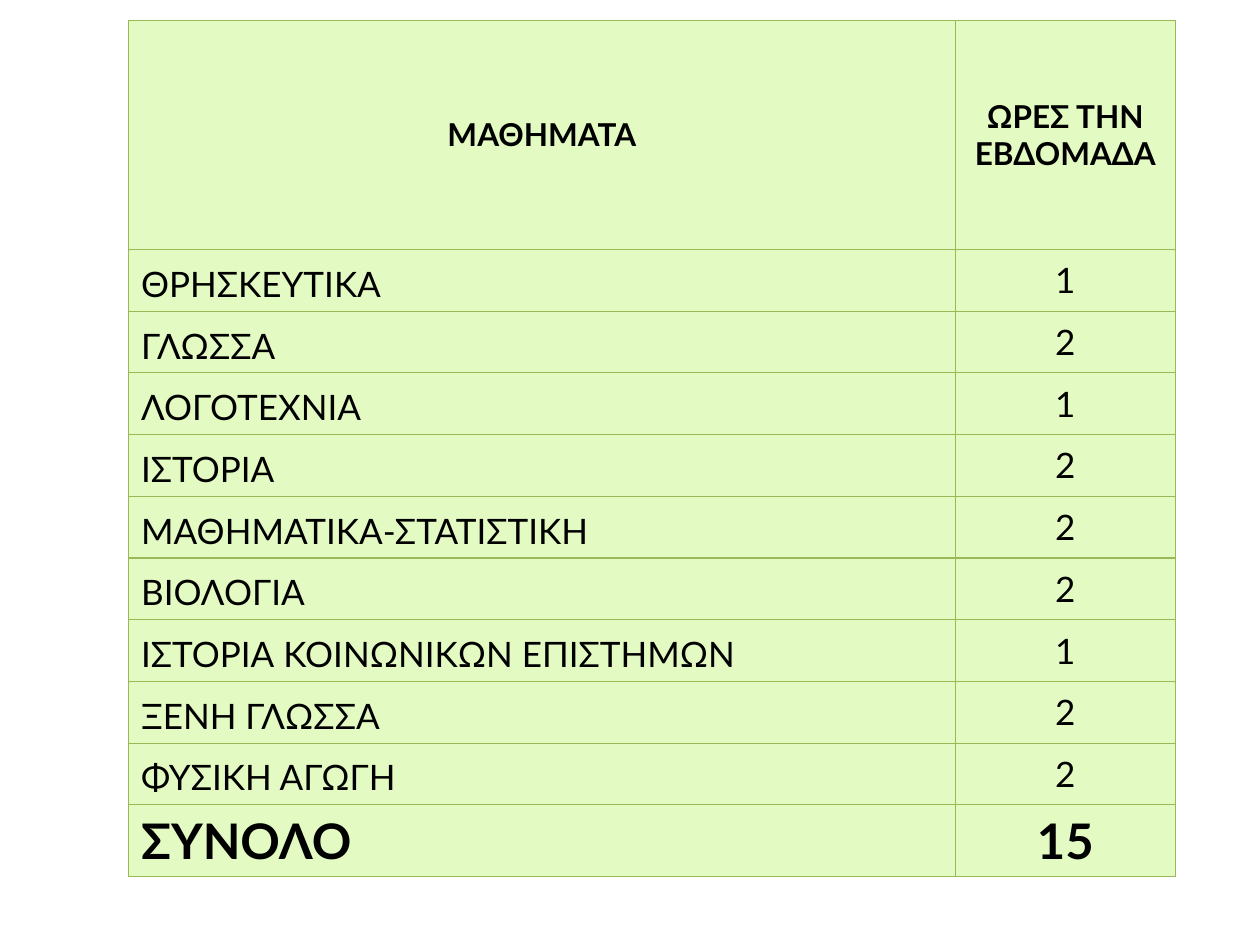
from lxml import etree
from pptx import Presentation
from pptx.dml.color import RGBColor
from pptx.enum.text import MSO_ANCHOR, PP_ALIGN
from pptx.oxml.ns import qn
from pptx.util import Inches, Pt

LEFT, CENTER = PP_ALIGN.LEFT, PP_ALIGN.CENTER
MIDDLE, BOTTOM = MSO_ANCHOR.MIDDLE, MSO_ANCHOR.BOTTOM

FILL, BORDER, TEXT = "E3FBC2", "98B955", "000000"
COL_WIDTHS = [6.56, 1.75]
HEADER_HEIGHT, LESSON_HEIGHT, TOTAL_HEIGHT = 1.82, 0.49, 0.56
HEADER = ("ΜΑΘΗΜΑΤΑ", "ΩΡΕΣ ΤΗΝ ΕΒΔΟΜΑΔΑ")
LESSONS = [
    ("ΘΡΗΣΚΕΥΤΙΚΑ", 1),
    ("ΓΛΩΣΣΑ", 2),
    ("ΛΟΓΟΤΕΧΝΙΑ", 1),
    ("ΙΣΤΟΡΙΑ", 2),
    ("ΜΑΘΗΜΑΤΙΚΑ-ΣΤΑΤΙΣΤΙΚΗ", 2),
    ("ΒΙΟΛΟΓΙΑ", 2),
    ("ΙΣΤΟΡΙΑ ΚΟΙΝΩΝΙΚΩΝ ΕΠΙΣΤΗΜΩΝ", 1),
    ("ΞΕΝΗ ΓΛΩΣΣΑ", 2),
    ("ΦΥΣΙΚΗ ΑΓΩΓΗ", 2),
]
TOTAL = ("ΣΥΝΟΛΟ", sum(hours for _, hours in LESSONS))

HEADER_FONT = {"size": Pt(18), "bold": True}
LESSON_FONT = {"size": Pt(20), "bold": False}
TOTAL_FONT = {"size": Pt(28), "bold": True}


def color(value):
    return RGBColor.from_string(value)


def set_borders(cell):
    tc_pr = cell._tc.get_or_add_tcPr()
    for i, side in enumerate(("lnL", "lnR", "lnT", "lnB")):
        ln = etree.Element(qn(f"a:{side}"), w=str(Pt(0.75)))
        fill = etree.SubElement(ln, qn("a:solidFill"))
        etree.SubElement(fill, qn("a:srgbClr"), val=BORDER)
        tc_pr.insert(i, ln)


def fill_cell(cell, text, font, align, anchor):
    cell.fill.solid()
    cell.fill.fore_color.rgb = color(FILL)
    set_borders(cell)
    cell.vertical_anchor = anchor
    p = cell.text_frame.paragraphs[0]
    p.alignment = align
    r = p.add_run()
    r.text = str(text)
    for name, value in {"name": "Lato", **font}.items():
        setattr(r.font, name, value)
    r.font.color.rgb = color(TEXT)


def add_timetable(s):
    rows = [(HEADER, HEADER_HEIGHT, HEADER_FONT, CENTER, MIDDLE)]
    rows += [(lesson, LESSON_HEIGHT, LESSON_FONT, LEFT, BOTTOM) for lesson in LESSONS]
    rows.append((TOTAL, TOTAL_HEIGHT, TOTAL_FONT, LEFT, BOTTOM))
    height = sum(row[1] for row in rows)
    table = s.shapes.add_table(
        len(rows), len(COL_WIDTHS), Inches(1.02), Inches(0.16),
        Inches(sum(COL_WIDTHS)), Inches(height)).table
    for col, width in zip(table.columns, COL_WIDTHS):
        col.width = Inches(width)
    for i, ((label, hours), row_height, font, align, anchor) in enumerate(rows):
        table.rows[i].height = Inches(row_height)
        fill_cell(table.cell(i, 0), label, font, align, anchor)
        fill_cell(table.cell(i, 1), hours, font, CENTER, MIDDLE)


def main():
    prs = Presentation()
    prs.slide_width, prs.slide_height = Inches(10), Inches(7.5)
    s = prs.slides.add_slide(prs.slide_layouts[6])
    add_timetable(s)
    prs.save("out.pptx")


if __name__ == "__main__":
    main()
